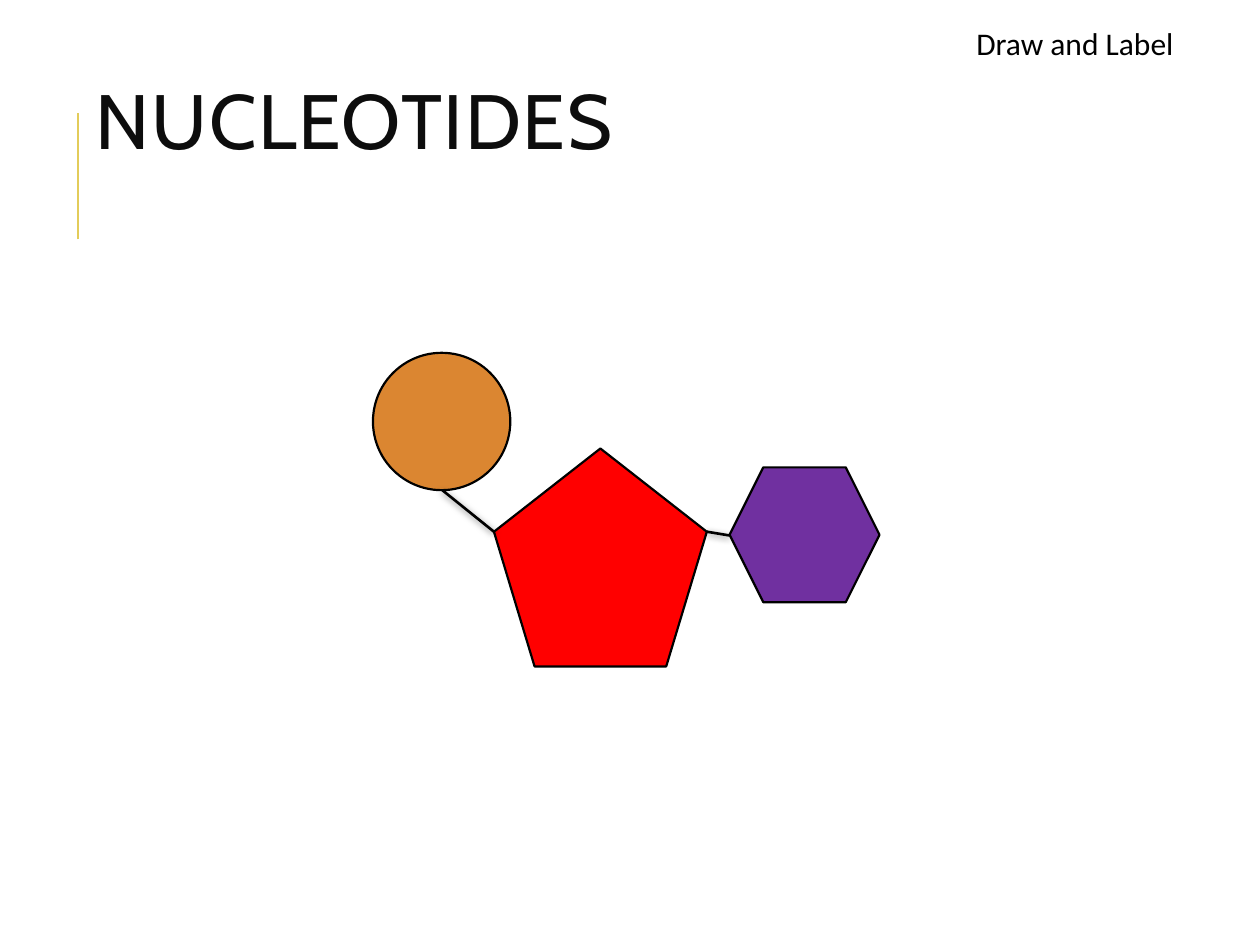
from lxml.etree import SubElement
from pptx import Presentation
from pptx.dml.color import RGBColor
from pptx.enum.shapes import MSO_CONNECTOR, MSO_SHAPE
from pptx.enum.text import MSO_ANCHOR, MSO_AUTO_SIZE, PP_ALIGN
from pptx.oxml.ns import qn
from pptx.util import Inches, Pt

COLORS = {
    "accent": "E3CC5A", "title": "0D0D0D", "black": "000000",
    "phosphate": "DB8631", "sugar": "FF0000", "base": "7030A0",
}

# Content: shape, colour, (left, top, width, height)
PARTS = [
    (MSO_SHAPE.OVAL, "phosphate", (2.96, 2.8, 1.09, 1.09)),
    (MSO_SHAPE.REGULAR_PENTAGON, "sugar", (3.92, 3.56, 1.69, 1.73)),
    (MSO_SHAPE.HEXAGON, "base", (5.79, 3.71, 1.19, 1.07)),
]
# Bonds between the parts: start, end
BONDS = [((3.51, 3.89), (3.92, 4.22)), ((5.61, 4.22), (5.79, 4.25))]


def color(name):
    return RGBColor.from_string(COLORS[name])


def write(shape, text, font, size, color_name, line_spacing=1.0, tracking=0):
    paragraph = shape.text_frame.paragraphs[0]
    paragraph.alignment = PP_ALIGN.LEFT
    paragraph.line_spacing = line_spacing
    run = paragraph.add_run()
    run.text = text
    run.font.name = font
    run.font.size = Pt(size)
    run.font.color.rgb = color(color_name)
    if tracking:
        run.font._element.set("spc", str(tracking * 100))


def add_line(shapes, start, end, color_name, shadow=False):
    line = shapes.add_connector(
        MSO_CONNECTOR.STRAIGHT, *(Inches(value) for value in start + end))
    line.line.color.rgb = color(color_name)
    line.line.width = Pt(1.5)
    effects = SubElement(line._element.spPr, qn("a:effectLst"))
    if shadow:
        outer = SubElement(effects, qn("a:outerShdw"), blurRad=str(Pt(4)),
                           dist=str(Pt(1)), dir="5400000", rotWithShape="0")
        tint = SubElement(outer, qn("a:srgbClr"), val=COLORS["black"])
        SubElement(tint, qn("a:alpha"), val="50000")


presentation = Presentation()
presentation.slide_width, presentation.slide_height = Inches(10), Inches(7.5)
slide = presentation.slides.add_slide(presentation.slide_layouts[5])

# Title with its accent line
add_line(slide.shapes, (0.62, 1.9), (0.62, 0.9), "accent")
title = slide.shapes.title
title.left, title.top = Inches(0.66), Inches(0.19)
title.width, title.height = Inches(7.97), Inches(1.64)
title.text_frame.vertical_anchor = MSO_ANCHOR.MIDDLE
title.text_frame.auto_size = MSO_AUTO_SIZE.NONE
write(title, "NUCLEOTIDES", "Cabin", 44, "title", line_spacing=0.8, tracking=1)

# Nucleotide
nucleotide = slide.shapes.add_group_shape()
for kind, color_name, box in PARTS:
    part = nucleotide.shapes.add_shape(kind, *(Inches(value) for value in box))
    part.shadow.inherit = False
    part.fill.solid()
    part.fill.fore_color.rgb = color(color_name)
    part.line.color.rgb = color("black")
    part.line.width = Pt(1.25)
for start, end in BONDS:
    add_line(nucleotide.shapes, start, end, "black", shadow=True)

# Instruction
instruction = slide.shapes.add_textbox(
    Inches(7.65), Inches(0.14), Inches(2.24), Inches(0.4))
instruction.text_frame.word_wrap = True
instruction.text_frame.auto_size = MSO_AUTO_SIZE.SHAPE_TO_FIT_TEXT
write(instruction, "Draw and Label", "Calibri", 18, "black")

presentation.save("out.pptx")
